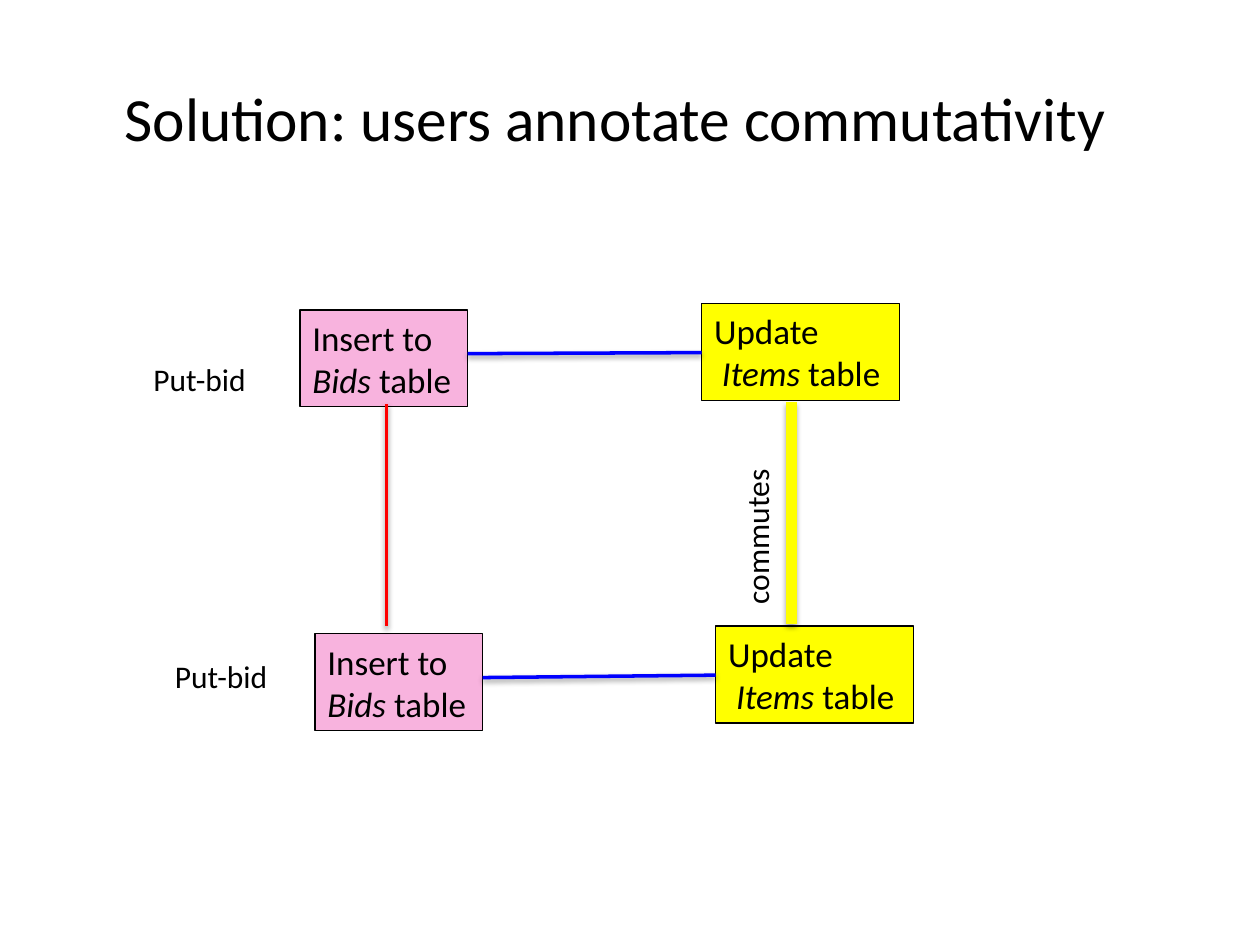
from lxml import etree
from pptx import Presentation
from pptx.dml.color import RGBColor
from pptx.enum.shapes import MSO_CONNECTOR as Connector, MSO_SHAPE as Shape
from pptx.enum.text import MSO_ANCHOR as Anchor, PP_ALIGN as Align
from pptx.oxml import parse_xml
from pptx.oxml.ns import nsdecls
from pptx.util import Pt

COLORS = {"black": "000000", "pink": "F8B3DE", "yellow": "FFFF00",
          "blue": "0000FF", "red": "FF0000"}
BOX_HEIGHT = 55.4
INSERT_WIDTH, UPDATE_WIDTH = 95.8, 113


def color(name):
    return RGBColor.from_string(COLORS[name])


def add_line(start, end, name, width):
    """Draw a straight connector with a soft shadow falling below it."""
    line = page.shapes.add_connector(
        Connector.STRAIGHT, *[Pt(value) for value in start + end])
    line.line.color.rgb = color(name)
    line.line.width = Pt(width)
    effects = etree.SubElement(line._element.spPr, "{%s}effectLst" % line._element.nsmap["a"])
    effects.append(parse_xml(
        f'<a:outerShdw {nsdecls("a")} blurRad="{Pt(3.1)}" dist="{Pt(1.6)}" '
        'dir="5400000" rotWithShape="0"><a:srgbClr val="000000">'
        '<a:alpha val="38000"/></a:srgbClr></a:outerShdw>'))


deck = Presentation()
deck.slide_width, deck.slide_height = Pt(720), Pt(540)
page = deck.slides.add_slide(deck.slide_layouts[6])

# Both transactions: left and top of each operation, and of the label
rows = [
    {"insert": (171.4, 177.1), "update": (401, 173.5), "label": (80.6, 202.3)},
    {"insert": (180, 362.2), "update": (409, 357.8), "label": (92.9, 372.2)},
]
for row in rows:
    operations = [
        (row["insert"], INSERT_WIDTH, "pink", "Insert to", "Bids ", 0),
        (row["update"], UPDATE_WIDTH, "yellow", "Update", "Items ", 4.5),
    ]
    for (left, top), width, fill, action, table, indent in operations:
        box = page.shapes.add_shape(
            Shape.RECTANGLE, Pt(left), Pt(top), Pt(width), Pt(BOX_HEIGHT))
        box.shadow.inherit = False
        box.fill.solid()
        box.fill.fore_color.rgb = color(fill)
        box.line.color.rgb = color("black")
        box.line.width = Pt(0.75)
        frame = box.text_frame
        frame.word_wrap = False
        frame.vertical_anchor = Anchor.TOP
        frame.text = action
        para = frame.add_paragraph()
        para._p.get_or_add_pPr().set("marL", str(Pt(indent)))
        span = para.add_run()
        span.text = table
        span.font.italic = True
        para.add_run().text = "table"
        for para in frame.paragraphs:
            para.alignment = Align.LEFT
            para.font.name = "Calibri"
            para.font.size = Pt(20)
            para.font.color.rgb = color("black")

    insert_left, insert_top = row["insert"]
    update_left, update_top = row["update"]
    add_line((insert_left + INSERT_WIDTH, insert_top + 25),
             (update_left, update_top + 28), "blue", 2)

# Conflicts between the two transactions
add_line((221, 231), (221, 358), "red", 2)
add_line((452.2, 229.7), (452.2, 356.4), "yellow", 6)

texts = [("Solution: users annotate commutativity", 9.4, 21.6, 684, 90, 35.1, 0)]
texts += [("Put-bid", *row["label"], 68.4, 28.8, 18, 0) for row in rows]
texts.append(("commutes", 380.2, 285.8, 104.4, 28.8, 18, 270))
for text, left, top, width, height, size, rotation in texts:
    box = page.shapes.add_textbox(Pt(left), Pt(top), Pt(width), Pt(height))
    box.rotation = rotation
    frame = box.text_frame
    frame.word_wrap = True
    frame.text = text
    para = frame.paragraphs[0]
    para.font.name = "Calibri"
    para.font.size = Pt(size)
    para.font.color.rgb = color("black")
    if height == 90:
        frame.vertical_anchor = Anchor.MIDDLE
        para.alignment = Align.CENTER

deck.save("out.pptx")
